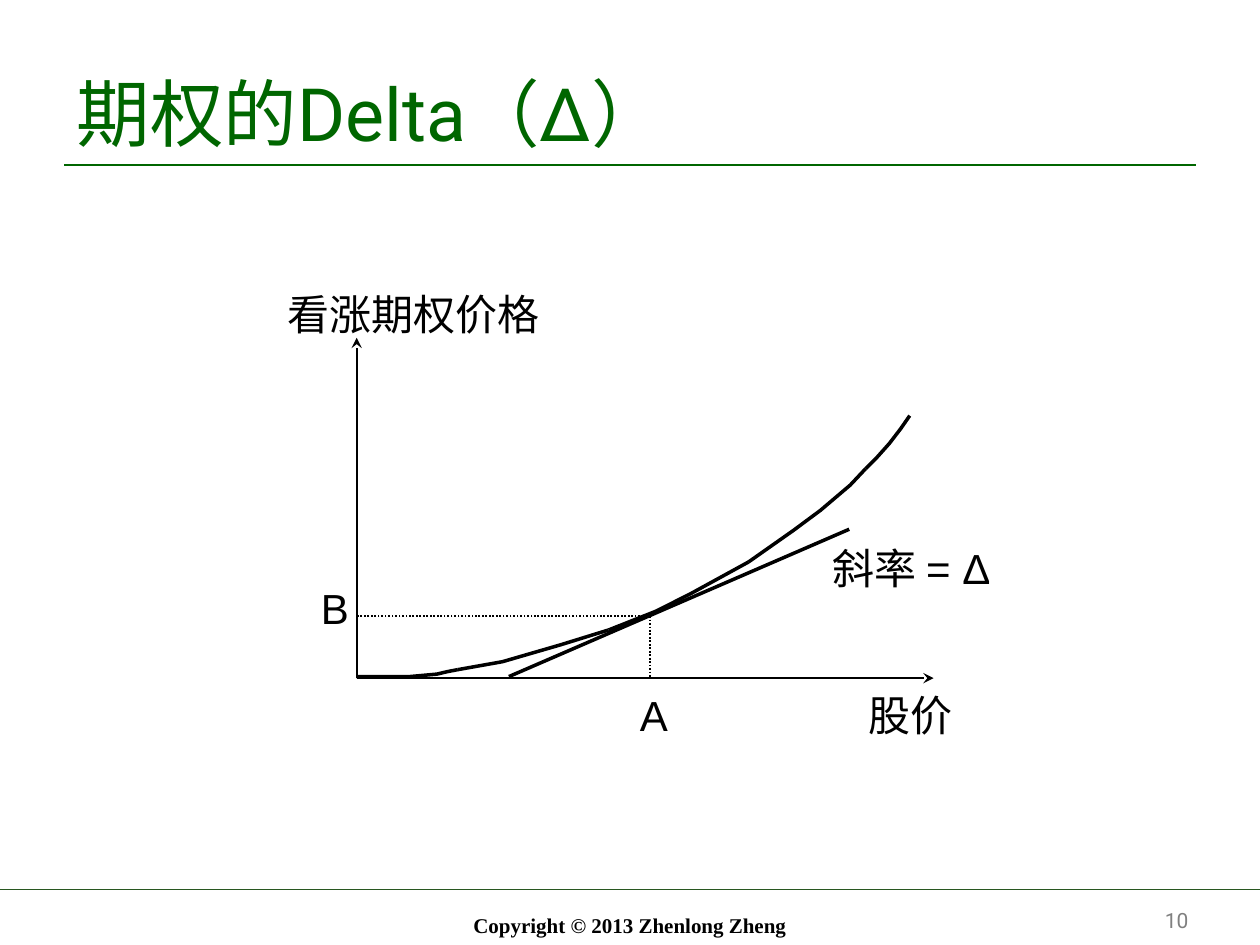
import pptx
import pptx.dml.color
import pptx.enum.dml
import pptx.enum.shapes
import pptx.enum.text
import pptx.oxml.ns
import pptx.util
from lxml import etree

Cm, Pt = pptx.util.Cm, pptx.util.Pt
Align = pptx.enum.text.PP_ALIGN
Anchor = pptx.enum.text.MSO_ANCHOR
Fit = pptx.enum.text.MSO_AUTO_SIZE
DOTTED = pptx.enum.dml.MSO_LINE.ROUND_DOT
qn = pptx.oxml.ns.qn

THEME = {
    "color": {"black": "000000", "green": "006600", "footer_rule": "285720", "gray": "808080"},
    "text": {
        "title": {"name": "Roboto", "size": Pt(42)},
        "label": {"name": "Arial", "size": Pt(24)},
        "copyright": {"name": "Times New Roman", "size": Pt(12), "bold": True},
        "number": {"name": "Roboto", "size": Pt(12)},
    },
}

presentation = pptx.Presentation()
presentation.slide_width, presentation.slide_height = Cm(25.4), Cm(19.05)
slide = presentation.slides.add_slide(presentation.slide_layouts[6])


def add_text(text, box, style, color="black", align=Align.LEFT, frame_format=None):
    shape = slide.shapes.add_textbox(*[Cm(length) for length in box])
    frame = shape.text_frame
    for name, value in (frame_format or {"word_wrap": True, "vertical_anchor": Anchor.BOTTOM}).items():
        setattr(frame, name, value)
    paragraph = frame.paragraphs[0]
    paragraph.alignment = align
    run = paragraph.add_run()
    run.text = text
    for name, value in THEME["text"][style].items():
        setattr(run.font, name, value)
    run.font.color.rgb = pptx.dml.color.RGBColor.from_string(THEME["color"][color])


def add_line(start, end, color="black", dash=None, arrow=False):
    connector = slide.shapes.add_connector(
        pptx.enum.shapes.MSO_CONNECTOR.STRAIGHT, *[Cm(length) for length in start + end])
    connector.line.color.rgb = pptx.dml.color.RGBColor.from_string(THEME["color"][color])
    connector.line.width = Pt(1)
    if dash:
        connector.line.dash_style = dash
    if arrow:
        etree.SubElement(connector.line._get_or_add_ln(), qn("a:tailEnd"), type="stealth")
    etree.SubElement(connector._element.spPr, qn("a:effectLst"))


# Rules, footer and title
add_line((0, 17.93), (25.4, 17.93), "footer_rule")
add_line((1.3, 3.33), (24.1, 3.33), "green")
add_text("Copyright © 2013 Zhenlong Zheng", (9.12, 18.24, 7.16, 0.79), "copyright", align=Align.CENTER)
add_text("期权的Delta（Δ）", (1.3, 0.91, 22.86, 2.36), "title", "green")
add_text("10", (18.29, 18.14, 5.92, 0.79), "number", "gray", Align.RIGHT)

# Axes
origin = (7.19, 13.67)
add_line(origin, (7.19, 6.81), arrow=True)
add_line(origin, (18.82, 13.67), arrow=True)

# Option price curve in sections, then its tangent
curves = [
    [(7.19, 13.64), (7.82, 13.64), (8.26, 13.64), (8.81, 13.59), (9.02, 13.54), (9.23, 13.5)],
    [(9.23, 13.5), (10.13, 13.34), (11.3, 13), (12.27, 12.7)],
    [(12.27, 12.7), (13.23, 12.32), (13.94, 11.96), (15.09, 11.33)],
    [(15.09, 11.33), (16, 10.69), (16.54, 10.29), (17.14, 9.78), (17.45, 9.45)],
    [(17.45, 9.45), (17.68, 9.22), (17.93, 8.94), (18.16, 8.64), (18.34, 8.38)],
    [(10.26, 13.64), (17.12, 10.67)],
]
for curve in curves:
    points = [(Cm(x), Cm(y)) for x, y in curve]
    builder = slide.shapes.build_freeform(*points[0])
    builder.add_line_segments(points[1:], close=False)
    shape = builder.convert_to_shape()
    shape.shadow.inherit = False
    shape.fill.background()
    shape.line.color.rgb = pptx.dml.color.RGBColor.from_string(THEME["color"]["black"])
    shape.line.width = Pt(2)

# Guides from the tangent point to both axes
tangent_point = (13.11, 12.42)
add_line(tangent_point, (tangent_point[0], origin[1]), dash=DOTTED)
add_line(tangent_point, (origin[0], tangent_point[1]), dash=DOTTED)

# Labels
label_format = {"word_wrap": False, "auto_size": Fit.SHAPE_TO_FIT_TEXT, "vertical_anchor": Anchor.TOP}
labels = [
    ("看涨期权价格", 5.51, 5.69, 5.64, Align.CENTER),
    ("A", 12.65, 13.77, 1.09, Align.LEFT),
    ("B", 6.22, 11.61, 1.09, Align.LEFT),
    ("斜率 = Δ", 16.54, 10.82, 4.11, Align.LEFT),
    ("股价", 17.25, 13.77, 2.24, Align.LEFT),
]
for text, left, top, width, align in labels:
    add_text(text, (left, top, width, 1.3), "label", align=align, frame_format=label_format)

presentation.save("out.pptx")
